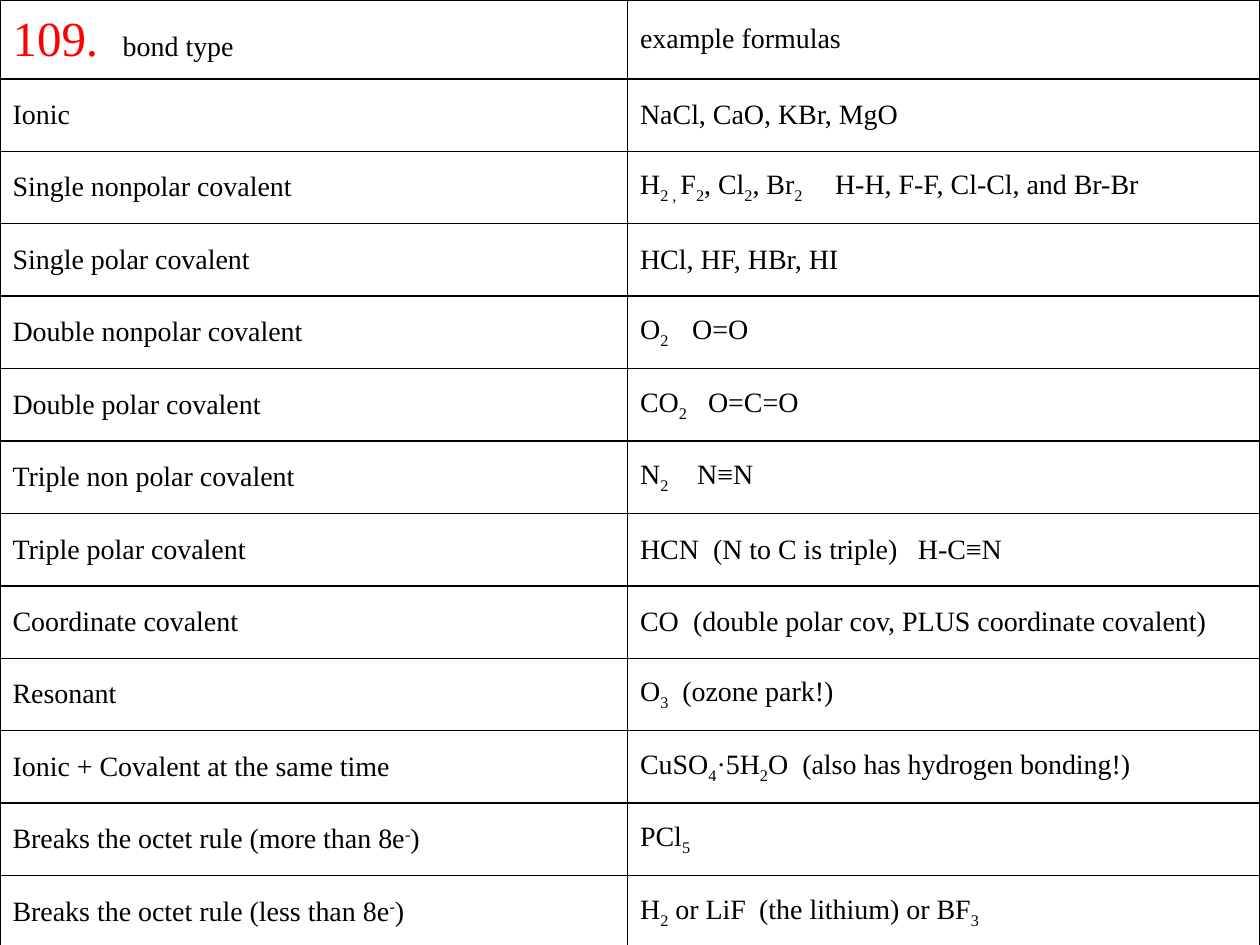
from lxml import etree
from pptx import Presentation
from pptx import util as u
from pptx.dml.color import RGBColor
from pptx.enum import text
from pptx.oxml.ns import qn

FONT = "Times New Roman"
BLACK, RED = "000000", "FF0000"
COLUMN_WIDTHS = (12.65, 12.75)
HEADER_HEIGHT, ROW_HEIGHT = 1.59, 1.46
BASELINES = {"_": "-25000", "^": "30000"}

# "|" separates spans; a leading "_" lowers a span and "^" raises it.
# The numbers after a text are its tab stops in centimetres.
ROWS = [
    (("109.|\tbond type", 2.22), ("example formulas",)),
    (("Ionic",), ("NaCl, CaO, KBr, MgO",)),
    (("Single nonpolar covalent",),
     ("H|_2 , |F|_2|, Cl|_2|, Br|_2|\tH-H, F-F, Cl-Cl, and Br-Br", 3.93)),
    (("Single polar covalent",), ("HCl, HF, HBr, HI",)),
    (("Double nonpolar covalent",), ("O|_2|\tO=O", 1.05)),
    (("Double polar covalent",), ("CO|_2|\tO=C=O", 1.37)),
    (("Triple non polar covalent",), ("N|_2|\tN≡N", 1.15)),
    (("Triple polar covalent",),
     ("HCN\t(N to C is triple)\tH-C≡N", 1.47, 5.6)),
    (("Coordinate covalent",),
     ("CO\t(double polar cov, PLUS coordinate covalent)", 1.07)),
    (("Resonant",), ("O|_3|\t(ozone park!)", 0.85)),
    (("Ionic + Covalent at the same time",),
     ("CuSO|_4|·5H|_2|O\t(also has hydrogen bonding!)", 3.27)),
    (("Breaks the octet rule (more than 8e|^-|)",), ("PCl|_5",)),
    (("Breaks the octet rule (less than 8e|^-|)",),
     ("H|_2| or LiF\t(the lithium) or BF|_3", 2.4)),
]


def color(value):
    return RGBColor.from_string(value)


def add_borders(cell):
    properties = cell._tc.get_or_add_tcPr()
    for side in ("lnL", "lnR", "lnT", "lnB"):
        line = etree.SubElement(properties, qn(f"a:{side}"), w=str(u.Pt(1)))
        fill = etree.SubElement(line, qn("a:solidFill"))
        etree.SubElement(fill, qn("a:srgbClr"), val=BLACK)


def add_tab_stops(para, stops):
    tabs = etree.SubElement(para._p.get_or_add_pPr(), qn("a:tabLst"))
    for stop in stops:
        etree.SubElement(tabs, qn("a:tab"), pos=str(u.Cm(stop)), algn="l")


def add_spans(para, marked):
    """Write marked text as spans, lowering or raising those that ask for it."""
    for part in marked.split("|"):
        span = para.add_run()
        baseline = BASELINES.get(part[0])
        span.text = part[1:] if baseline else part
        if baseline:
            span._r.get_or_add_rPr().set("baseline", baseline)


def fill_cell(cell, marked, *stops):
    add_borders(cell)
    cell.fill.background()
    cell.vertical_anchor = text.MSO_ANCHOR.MIDDLE
    para = cell.text_frame.paragraphs[0]
    if stops:
        add_tab_stops(para, stops)
    para.font.name = FONT
    para.font.size = u.Pt(16)
    para.font.color.rgb = color(BLACK)
    add_spans(para, marked)


def add_bond_table(page):
    height = HEADER_HEIGHT + ROW_HEIGHT * (len(ROWS) - 1)
    table = page.shapes.add_table(
        len(ROWS), len(COLUMN_WIDTHS), 0, 0,
        u.Cm(sum(COLUMN_WIDTHS)), u.Cm(height)).table
    table.first_row = table.horz_banding = False
    for column, width in zip(table.columns, COLUMN_WIDTHS):
        column.width = u.Cm(width)
    for index, (row, contents) in enumerate(zip(table.rows, ROWS)):
        row.height = u.Cm(ROW_HEIGHT if index else HEADER_HEIGHT)
        for cell, content in zip(row.cells, contents):
            fill_cell(cell, *content)
    return table


def emphasize_number(table):
    number = table.cell(0, 0).text_frame.paragraphs[0].runs[0]
    number.font.size = u.Pt(28)
    number.font.color.rgb = color(RED)


def main():
    deck = Presentation()
    deck.slide_width, deck.slide_height = u.Cm(25.4), u.Cm(19.05)
    page = deck.slides.add_slide(deck.slide_layouts[6])
    emphasize_number(add_bond_table(page))
    deck.save("out.pptx")


if __name__ == "__main__":
    main()
